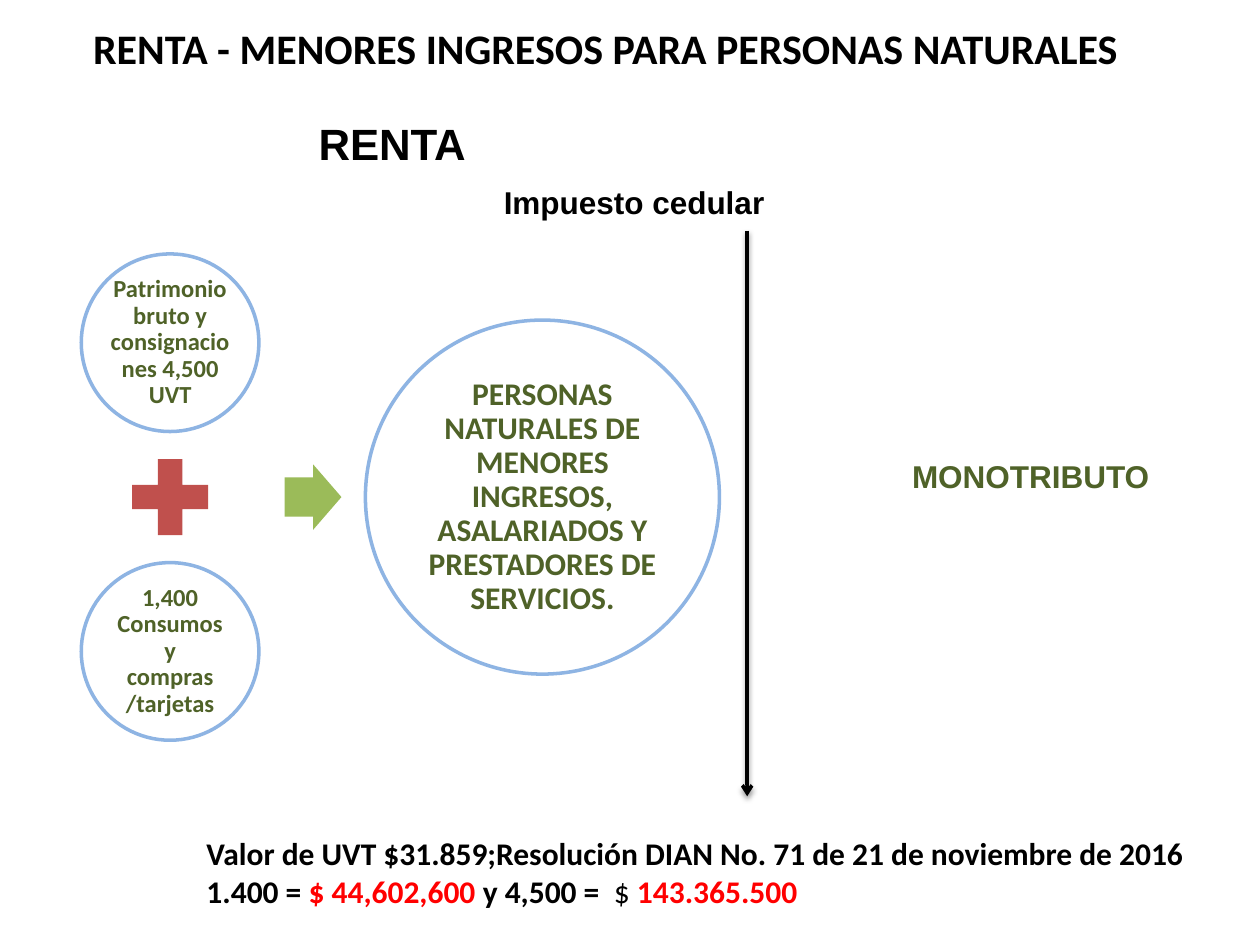
from lxml.etree import SubElement
from pptx import Presentation
from pptx.dml.color import RGBColor
from pptx.enum.shapes import MSO_CONNECTOR, MSO_SHAPE as Kind
from pptx.enum.text import MSO_ANCHOR, MSO_AUTO_SIZE as Fit, PP_ALIGN
from pptx.oxml.ns import qn
from pptx.util import Inches, Pt

BLACK = RGBColor(0, 0, 0)
WHITE = RGBColor(255, 255, 255)
RED = RGBColor(255, 0, 0)
OLIVE = RGBColor(0x4F, 0x62, 0x28)
BLUE = RGBColor(0x8E, 0xB4, 0xE3)
BRICK = RGBColor(0xC0, 0x50, 0x4D)
GREEN = RGBColor(0x9B, 0xBB, 0x59)

COLS, ROWS = 100, 75
CELL = Inches(0.1)
AXIS = 39.45  # row on which the diagram is centred
LEFT = 13.5   # column on which the two sources are centred
STEP = 12.25  # rows from the axis to each source


def grid(*cells):
    return [round(n * CELL) for n in cells]


def centre(x, y, w, h):
    return grid(x - w / 2, y - h / 2, w, h)


def add_run(para, text, size, font="Calibri", color=BLACK, bold=True):
    run = para.add_run()
    run.text = text
    run.font.name = font
    run.font.size = Pt(size)
    run.font.bold = bold
    run.font.color.rgb = color


def add_label(slide, place, *lines):
    """Unwrapped text; each line is a list of run arguments."""
    frame = slide.shapes.add_textbox(*grid(*place)).text_frame
    frame.word_wrap = False
    frame.auto_size = Fit.SHAPE_TO_FIT_TEXT
    for i, runs in enumerate(lines):
        para = frame.add_paragraph() if i else frame.paragraphs[0]
        for run in runs:
            add_run(para, *run)


def add_shape(slide, kind, place, fill, line=None):
    shape = slide.shapes.add_shape(kind, *place)
    shape.shadow.inherit = False
    shape.fill.solid()
    shape.fill.fore_color.rgb = fill
    if line is None:
        shape.line.fill.background()
    else:
        shape.line.color.rgb = line
        shape.line.width = Pt(2)
    return shape


def add_circle(slide, x, y, size, text, points, pad):
    """Outlined circle with wrapped text in its inner square."""
    add_shape(slide, Kind.OVAL, centre(x, y, size, size), WHITE, BLUE)
    side = size * 0.705
    box = slide.shapes.add_textbox(*centre(x, y, side, side))
    frame = box.text_frame
    frame.word_wrap = True
    frame.vertical_anchor = MSO_ANCHOR.MIDDLE
    frame.margin_left = frame.margin_right = Inches(pad)
    frame.margin_top = frame.margin_bottom = Inches(pad)
    para = frame.paragraphs[0]
    para.alignment = PP_ALIGN.CENTER
    para.line_spacing = 0.9
    add_run(para, text, points, color=OLIVE)


def add_arrow(slide, x, top, end):
    """Vertical line with an arrowhead and a soft shadow below."""
    line = slide.shapes.add_connector(
        MSO_CONNECTOR.STRAIGHT, *grid(x, top, x, end))
    line.line.color.rgb = BLACK
    line.line.width = Pt(2)
    SubElement(line.line._get_or_add_ln(), qn("a:tailEnd"), type="arrow")
    effects = SubElement(line._element.spPr, qn("a:effectLst"))
    shade = SubElement(effects, qn("a:outerShdw"), blurRad=str(Pt(3.1)),
                       dist=str(Pt(1.6)), dir="5400000", rotWithShape="0")
    color = SubElement(shade, qn("a:srgbClr"), val=str(BLACK))
    SubElement(color, qn("a:alpha"), val="38000")


def main():
    deck = Presentation()
    deck.slide_width, deck.slide_height = grid(COLS, ROWS)
    slide = deck.slides.add_slide(deck.slide_layouts[6])

    add_label(slide, (6.4, 1.3, 83.9, 5),
              [("RENTA - MENORES INGRESOS PARA PERSONAS NATURALES", 24)])
    add_arrow(slide, 59.3, 18.3, 63.2)
    add_label(slide, (71.4, 35.8, 20.9, 3.9),
              [("MONOTRIBUTO", 18, "Arial", OLIVE)])

    add_circle(slide, LEFT, AXIS - STEP, 14.1,
               "Patrimonio bruto y consignaciones 4,500 UVT", 14, 0.02)
    add_shape(slide, Kind.MATH_PLUS, centre(LEFT, AXIS, 8.2, 8.2), BRICK)
    add_circle(slide, LEFT, AXIS + STEP, 14.1,
               "1,400 Consumos y compras /tarjetas", 14, 0.02)
    arrow = add_shape(slide, Kind.RIGHT_ARROW,
                      centre(24.85, AXIS, 4.5, 5.2), GREEN)
    arrow.adjustments[0] = 0.6
    add_circle(slide, 43.05, AXIS, 28.1,
               "PERSONAS NATURALES DE MENORES INGRESOS, ASALARIADOS Y "
               "PRESTADORES DE SERVICIOS.", 18, 0.03)

    add_label(slide, (15.4, 65.7, 80.1, 7),
              [("Valor de UVT $31.859;Resolución DIAN No. 71 de 21 de "
                "noviembre de 2016", 18)],
              [("1.400 = ", 18),
               ("$ 44,602,600 ", 18, "Calibri", RED),
               ("y 4,500 = ", 18),
               (" $ ", 18, "Calibri", BLACK, False),
               ("143.365.500", 18, "Calibri", RED)])
    add_label(slide, (24.3, 8.8, 14.4, 5.2),
              [("RENTA", 25, "Arial"), (" ", 18)])
    add_label(slide, (39, 14, 22.7, 3.9),
              [("Impuesto cedular", 18, "Arial")])
    deck.save("out.pptx")


if __name__ == "__main__":
    main()
